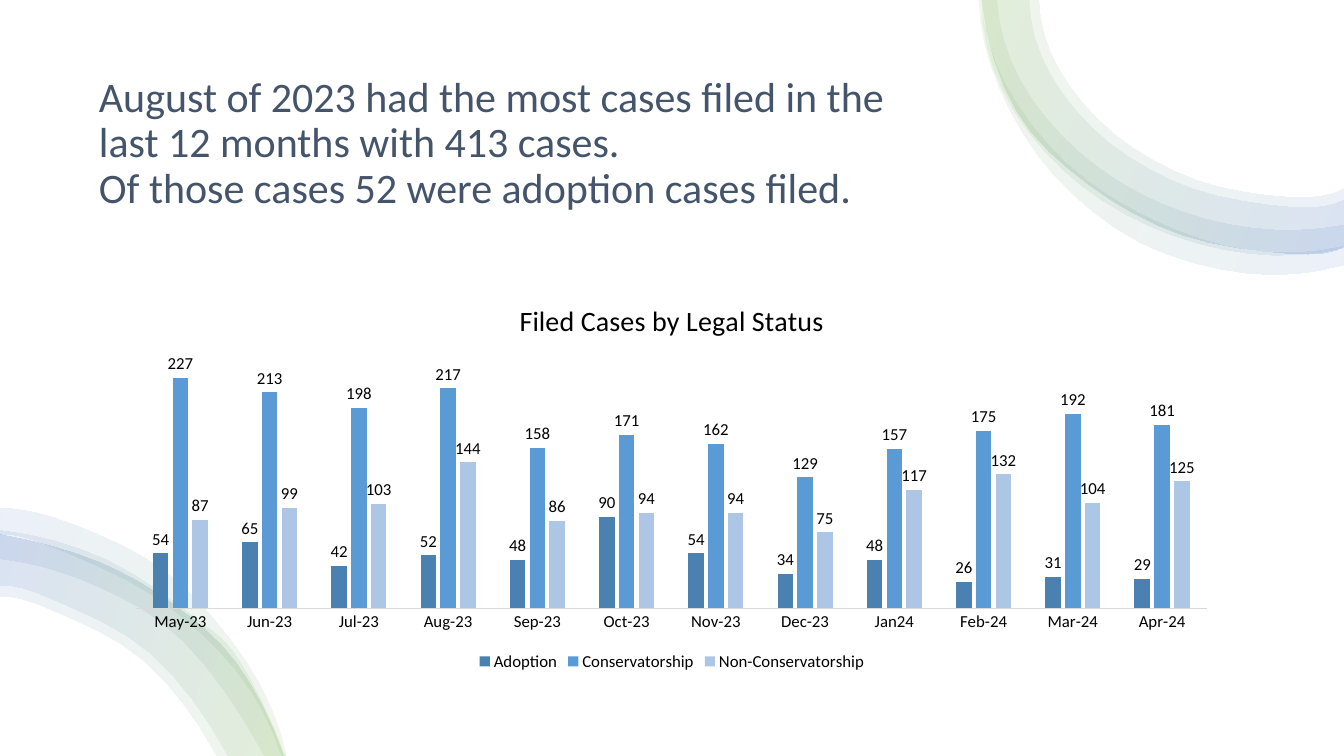
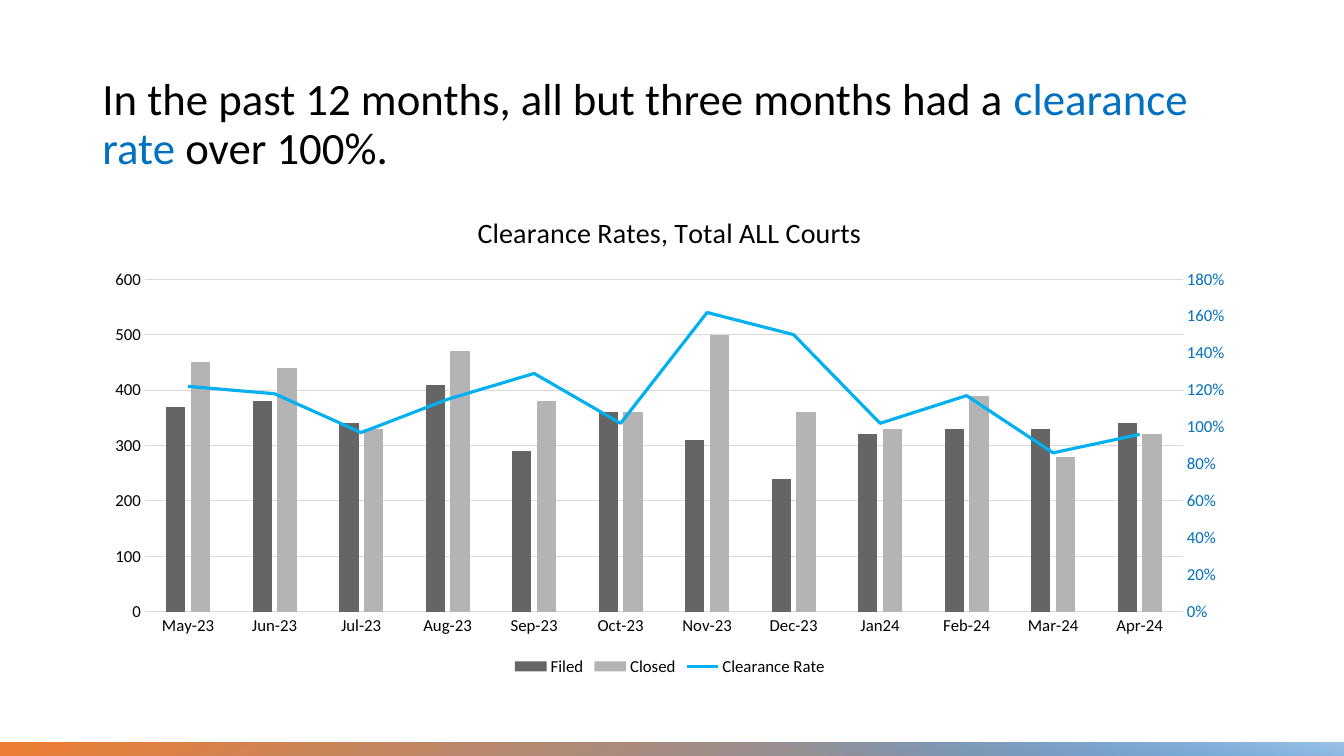
"""Build two slides on court case filings and clearance rates."""
from dataclasses import dataclass

from lxml import etree
from pptx import Presentation
from pptx.chart.axis import ValueAxis
from pptx.chart.data import CategoryChartData
from pptx.dml.color import RGBColor
from pptx.enum.chart import (XL_CHART_TYPE, XL_LABEL_POSITION, XL_LEGEND_POSITION,
                             XL_MARKER_STYLE, XL_TICK_MARK)
from pptx.enum.shapes import MSO_SHAPE
from pptx.enum.text import MSO_ANCHOR, PP_ALIGN
from pptx.oxml import parse_xml
from pptx.oxml.ns import qn
from pptx.util import Pt

COLUMNS = XL_CHART_TYPE.COLUMN_CLUSTERED
OUTSIDE_END = XL_LABEL_POSITION.OUTSIDE_END
BOTTOM = XL_LEGEND_POSITION.BOTTOM
NO_MARKER = XL_MARKER_STYLE.NONE
NO_TICK = XL_TICK_MARK.NONE
RECTANGLE = MSO_SHAPE.RECTANGLE
MIDDLE = MSO_ANCHOR.MIDDLE
LEFT = PP_ALIGN.LEFT
CHART_NS = "http://schemas.openxmlformats.org/drawingml/2006/chart"


@dataclass(frozen=True)
class Theme:
    font: str = "Calibri"
    paper: str = "FFFFFF"
    text: str = "000000"
    slate: str = "44546A"
    accent: str = "0070C0"
    grid: str = "D9D9D9"
    rate_line: str = "00B0F0"
    status_fills: tuple = ("4B81B1", "5B9BD5", "ADC6E5")
    court_fills: tuple = ("656565", "B4B4B4")
    ribbon: tuple = ((0, "70AD47", 10), (100, "4472C4", 10))
    band: tuple = ((0, "5B9BD5", 100), (100, "ED7D31", 100))
    band_glow: tuple = ((19, "5B9BD5", 0), (100, "9DC3E6", 100))
    title_small: int = 30
    title_large: int = 32
    chart_title: int = 20
    chart_text: int = 12


MONTHS = ["May-23", "Jun-23", "Jul-23", "Aug-23", "Sep-23", "Oct-23",
          "Nov-23", "Dec-23", "Jan24", "Feb-24", "Mar-24", "Apr-24"]
STATUS_SERIES = [
    ("Adoption", [54, 65, 42, 52, 48, 90, 54, 34, 48, 26, 31, 29], "0"),
    ("Conservatorship", [227, 213, 198, 217, 158, 171, 162, 129, 157, 175, 192, 181], "0"),
    ("Non-Conservatorship", [87, 99, 103, 144, 86, 94, 94, 75, 117, 132, 104, 125], "0"),
]
COURT_SERIES = [
    ("Filed", [370, 380, 340, 410, 290, 360, 310, 240, 320, 330, 330, 340], "0"),
    ("Closed", [450, 440, 330, 470, 380, 360, 500, 360, 330, 390, 280, 320], "0"),
    ("Clearance Rate",
     [1.22, 1.18, 0.97, 1.15, 1.29, 1.02, 1.62, 1.5, 1.02, 1.17, 0.86, 0.96], "0%"),
]

TOP_MAIN = [(701, 0), (726, 79), (778, 132), (845, 168), (921, 181), (960, 176)]
TOP_RIBBONS = [
    (TOP_MAIN, [(742, 0), (756, 49), (796, 96), (855, 129), (921, 141), (960, 135)]),
    (TOP_MAIN, [(735, 0), (750, 53), (792, 102), (852, 135), (921, 148), (960, 143)]),
    ([(701, 0), (716, 64), (759, 121), (820, 161), (892, 181), (960, 177)],
     [(712, 0), (729, 58), (771, 109), (828, 145), (894, 163), (960, 161)]),
    ([(699, 0), (714, 63), (753, 125), (814, 173), (890, 195), (960, 189)],
     [(701, 0), (718, 60), (762, 117), (823, 157), (892, 179), (960, 176)]),
]
LOW_MAIN = [(203, 540), (169, 474), (124, 432), (69, 401), (0, 382)]
LOW_RIBBONS = [
    ([(205, 540), (176, 473), (120, 410), (53, 375), (0, 363)],
     [(201, 540), (168, 478), (109, 425), (36, 390), (0, 382)]),
    (LOW_MAIN, [(155, 540), (103, 472), (38, 436), (0, 426)]),
    ([(204, 540), (172, 474), (144, 445), (76, 400), (0, 379)],
     [(189, 540), (131, 458), (68, 418), (0, 399)]),
    (LOW_MAIN, [(163, 540), (108, 467), (40, 429), (0, 418)]),
]


def extend_edge(first, second, third):
    return tuple(3 * a - 3 * b + c for a, b, c in zip(first, second, third))


def smooth_edge(knots, steps=4):
    ends = [extend_edge(*knots[:3]), *knots, extend_edge(*knots[:-4:-1])]
    points = []
    for a, b, c, d in zip(ends, ends[1:], ends[2:], ends[3:]):
        for step in range(steps):
            t = step / steps
            points.append(tuple(
                q + t * (r - p) / 2 + t ** 2 * (2 * p - 5 * q + 4 * r - s) / 2
                + t ** 3 * (3 * q - p - 3 * r + s) / 2
                for p, q, r, s in zip(a, b, c, d)))
    return [*points, knots[-1]]


class SlideMaker:
    def __init__(self, theme):
        self.theme = theme
        self.deck = Presentation()
        self.deck.slide_width = Pt(960)
        self.deck.slide_height = Pt(540)
        self.page = None

    def add_page(self):
        self.page = self.deck.slides.add_slide(self.deck.slide_layouts[5])

    def style_font(self, font, size, color):
        font.name = self.theme.font
        font.size = Pt(size)
        font.bold = False
        font.color.rgb = RGBColor.from_string(color)

    def title(self, frame, size, lines):
        box = self.page.shapes.title
        box.left, box.top, box.width, box.height = map(Pt, frame)
        box.text_frame.word_wrap = True
        box.text_frame.vertical_anchor = MIDDLE
        para = box.text_frame.paragraphs[0]
        para.alignment = LEFT
        para.line_spacing = 0.9
        for index, line in enumerate(lines):
            if index:
                para.add_line_break()
            for text, color in line:
                span = para.add_run()
                span.text = text
                self.style_font(span.font, size, color)

    def paint_gradient(self, shape, stops, angle):
        shape.shadow.inherit = False
        shape.line.fill.background()
        shape.fill.gradient()
        shape.fill.gradient_angle = 360 - angle
        stop_list = shape.element.spPr.find(".//" + qn("a:gsLst"))
        for old in list(stop_list):
            stop_list.remove(old)
        for position, color, opacity in stops:
            stop = etree.SubElement(stop_list, qn("a:gs"), pos=str(position * 1000))
            tint = etree.SubElement(stop, qn("a:srgbClr"), val=color)
            etree.SubElement(tint, qn("a:alpha"), val=str(opacity * 1000))

    def backdrop(self):
        shape = self.page.shapes.add_shape(RECTANGLE, Pt(0), Pt(0), Pt(960), Pt(540))
        shape.shadow.inherit = False
        shape.line.fill.background()
        shape.fill.solid()
        shape.fill.fore_color.rgb = RGBColor.from_string(self.theme.paper)
        self.page.shapes.title.element.addprevious(shape.element)

    def ribbon(self, outer, inner, angle):
        outline = smooth_edge(outer) + smooth_edge(inner)[::-1]
        points = [(Pt(x), Pt(y)) for x, y in outline]
        builder = self.page.shapes.build_freeform(*points[0])
        builder.add_line_segments(points[1:], close=True)
        self.paint_gradient(builder.convert_to_shape(), self.theme.ribbon, angle)

    def band(self, frame, stops, angle):
        shape = self.page.shapes.add_shape(RECTANGLE, *map(Pt, frame))
        self.paint_gradient(shape, stops, angle)

    def set_layout(self, parent, index, frame, place, inner=False):
        old = parent.find(qn("c:layout"))
        if old is not None:
            parent.remove(old)
        layout = etree.Element(qn("c:layout"))
        manual = etree.SubElement(layout, qn("c:manualLayout"))
        if inner:
            etree.SubElement(manual, qn("c:layoutTarget"), val="inner")
        for mode in ("xMode", "yMode"):
            etree.SubElement(manual, qn("c:" + mode), val="edge")
        left, top, width, height = frame
        origin = (left, top, 0, 0)
        for key, value, start, extent in zip("xywh", place, origin, (width, height) * 2):
            etree.SubElement(manual, qn("c:" + key), val=str((value - start) / extent))
        parent.insert(index, layout)

    def style_value_axis(self, axis, top, unit, color):
        axis.minimum_scale = 0
        axis.maximum_scale = top
        axis.major_unit = unit
        axis.major_tick_mark = axis.minor_tick_mark = NO_TICK
        axis.format.line.fill.background()
        self.style_font(axis.tick_labels.font, self.theme.chart_text, color)

    def column_chart(self, frame, heading, heading_at, plot_at, series, fills, top, unit):
        theme = self.theme
        data = CategoryChartData()
        data.categories = MONTHS
        for name, values, number_format in series:
            data.add_series(name, values, number_format)
        chart = self.page.shapes.add_chart(COLUMNS, *map(Pt, frame), data).chart
        self.style_font(chart.font, theme.chart_text, theme.text)

        chart.has_title = True
        span = chart.chart_title.text_frame.paragraphs[0].add_run()
        span.text = heading
        self.style_font(span.font, theme.chart_title, theme.text)
        heading_part = chart.element.find(".//" + qn("c:title"))
        plot_area = chart.element.find(".//" + qn("c:plotArea"))
        self.set_layout(heading_part, 1, frame, heading_at)
        self.set_layout(plot_area, 0, frame, plot_at, inner=True)

        chart.has_legend = True
        chart.legend.position = BOTTOM
        chart.legend.include_in_layout = False
        self.style_font(chart.legend.font, theme.chart_text, theme.text)

        months = chart.category_axis
        months.major_tick_mark = months.minor_tick_mark = NO_TICK
        months.format.line.color.rgb = RGBColor.from_string(theme.grid)
        months.format.line.width = Pt(0.75)
        self.style_font(months.tick_labels.font, theme.chart_text, theme.text)
        self.style_value_axis(chart.value_axis, top, unit, theme.text)

        plot = chart.plots[0]
        plot.vary_by_categories = False
        plot.gap_width = 219
        plot.overlap = -27
        for bars, color in zip(plot.series, fills):
            bars.format.fill.solid()
            bars.format.fill.fore_color.rgb = RGBColor.from_string(color)
        return chart, plot_area

    def label_columns(self, chart):
        chart.value_axis.visible = False
        chart.value_axis.has_major_gridlines = False
        plot = chart.plots[0]
        plot.has_data_labels = True
        labels = plot.data_labels
        labels.show_value = True
        labels.position = OUTSIDE_END
        self.style_font(labels.font, self.theme.chart_text, self.theme.text)

    def rate_on_right_axis(self, chart, plot_area):
        grid = chart.value_axis.major_gridlines.format.line
        grid.color.rgb = RGBColor.from_string(self.theme.grid)
        grid.width = Pt(0.75)
        bar_plot = plot_area.find(qn("c:barChart"))
        rate = bar_plot.findall(qn("c:ser"))[-1]
        bar_plot.remove(rate)
        for flag in rate.findall(qn("c:invertIfNegative")):
            rate.remove(flag)
        line_plot = parse_xml(
            f'<c:lineChart xmlns:c="{CHART_NS}"><c:grouping val="standard"/>'
            '<c:varyColors val="0"/><c:marker val="1"/>'
            '<c:axId val="5001"/><c:axId val="5002"/></c:lineChart>')
        line_plot.insert(2, rate)
        bar_plot.addnext(line_plot)
        hidden_axis = parse_xml(
            f'<c:catAx xmlns:c="{CHART_NS}"><c:axId val="5001"/>'
            '<c:scaling><c:orientation val="minMax"/></c:scaling><c:delete val="1"/>'
            '<c:axPos val="b"/><c:crossAx val="5002"/><c:crosses val="autoZero"/></c:catAx>')
        right_axis = parse_xml(
            f'<c:valAx xmlns:c="{CHART_NS}"><c:axId val="5002"/>'
            '<c:scaling><c:orientation val="minMax"/></c:scaling><c:delete val="0"/>'
            '<c:axPos val="r"/><c:numFmt formatCode="0%" sourceLinked="0"/>'
            '<c:tickLblPos val="nextTo"/><c:crossAx val="5001"/><c:crosses val="max"/>'
            '<c:crossBetween val="between"/></c:valAx>')
        plot_area.findall(qn("c:valAx"))[-1].addnext(right_axis)
        right_axis.addnext(hidden_axis)
        self.style_value_axis(ValueAxis(right_axis), 1.8, 0.2, self.theme.accent)

        line = chart.plots[1].series[0]
        line.smooth = False
        line.marker.style = NO_MARKER
        line.format.line.color.rgb = RGBColor.from_string(self.theme.rate_line)
        line.format.line.width = Pt(2.25)


def main():
    theme = Theme()
    maker = SlideMaker(theme)
    maker.add_page()
    maker.backdrop()
    for ribbons, angle in ((TOP_RIBBONS, 20), (LOW_RIBBONS, 200)):
        for outer, inner in ribbons:
            maker.ribbon(outer, inner, angle)
    maker.title((63.5, 36, 617, 134), theme.title_small, [
        [("August of 2023 had the most cases filed in the last 12 months with 413 cases. ",
          theme.slate)],
        [("Of those cases 52 were adoption cases filed.", theme.slate)]])
    chart, _ = maker.column_chart(
        (81.5, 201.5, 797, 281), "Filed Cases by Legal Status", (367.5, 211),
        (97, 253.5, 765, 181), STATUS_SERIES, theme.status_fills, 250, 50)
    maker.label_columns(chart)

    maker.add_page()
    maker.title((66, 26, 794, 127.5), theme.title_large, [
        [("In the past 12 months, all but three months had a ", theme.text),
         ("clearance rate", theme.accent), (" over 100%.", theme.text)]])
    maker.band((0, 530.5, 960, 9.5), theme.band, 240)
    maker.band((493.5, 530.5, 466.5, 9.5), theme.band_glow, 280)
    chart, plot_area = maker.column_chart(
        (66, 137.5, 825, 348.5), "Clearance Rates, Total ALL Courts", (337.5, 148.5),
        (103.5, 199.5, 741.5, 237.5), COURT_SERIES, theme.court_fills, 600, 100)
    maker.rate_on_right_axis(chart, plot_area)
    maker.deck.save("out.pptx")


if __name__ == "__main__":
    main()
